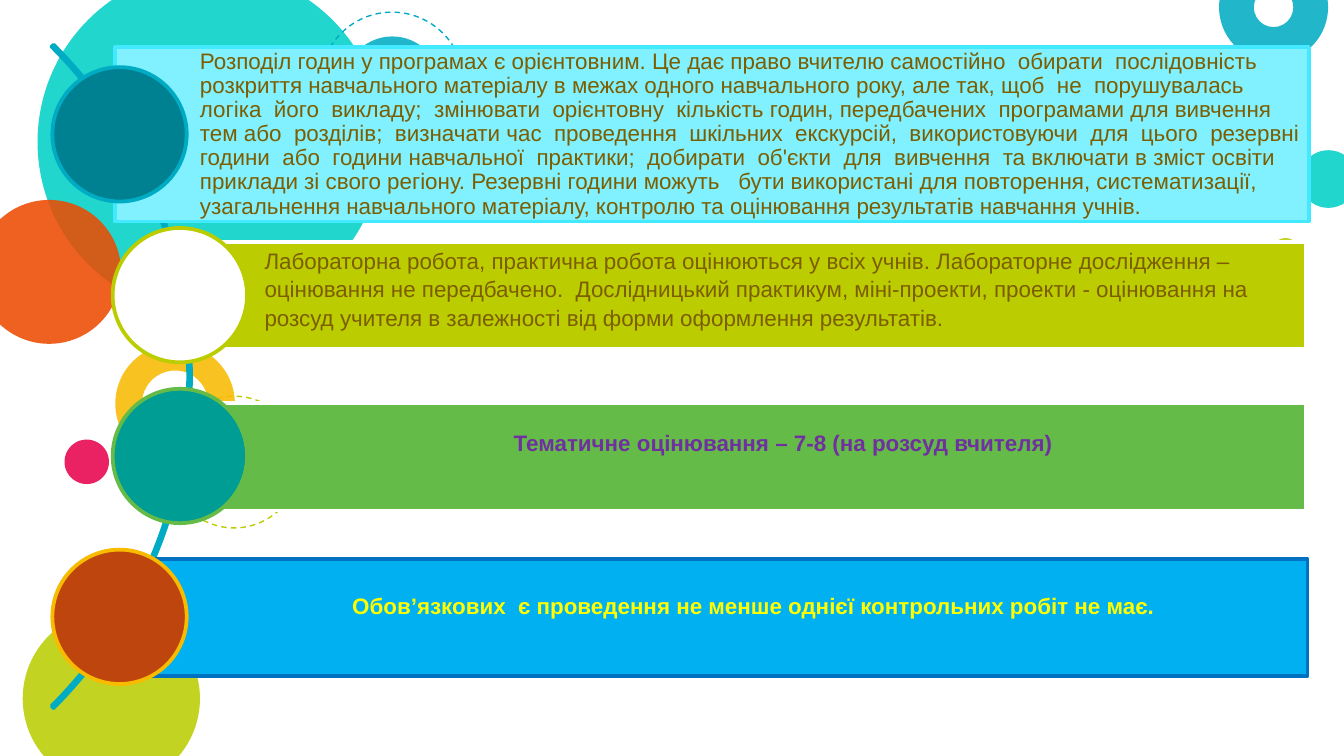
from lxml import etree
from pptx import Presentation
from pptx.dml.color import RGBColor
from pptx.enum.dml import MSO_LINE
from pptx.enum.shapes import MSO_SHAPE as Preset
from pptx.enum.text import MSO_ANCHOR as Anchor, PP_ALIGN as Align
from pptx.oxml.ns import qn
from pptx.util import Cm, Pt

TEAL, CYAN, LIME = "00D1C6", "00ACC3", "BBCD00"
ORANGE, AMBER, PINK = "ED4A00", "F8BB00", "E8004C"
BROWN, WHITE = "7C5E00", "FFFFFF"

# Background rounds: left, top, diameter, colour, ring thickness (None = disc)
ROUNDS = [
    (0.71, -0.58, 6.53, TEAL, 0.298),
    (-0.43, 3.78, 2.72, ORANGE, None),
    (6.5, 0.69, 1.83, CYAN, None),
    (2.18, 6.5, 2.26, AMBER, 0.223),
    (0.43, 11.53, 3.35, LIME, None),
    (1.22, 8.31, 0.84, PINK, None),
    (24.56, 2.84, 1.09, TEAL, None),
    (23.04, -0.89, 2.06, CYAN, 0.319),
    (24.03, 4.5, 0.53, LIME, None),
]

SCHEDULE = (
    "Розподіл годин у програмах є орієнтовним. Це дає право вчителю самостійно  обирати  "
    "послідовність розкриття навчального матеріалу в межах одного навчального року, але так, "
    "щоб  не  порушувалась  логіка  його  викладу;  змінювати  орієнтовну  кількість годин, "
    "передбачених  програмами для вивчення  тем або  розділів;  визначати час  проведення  "
    "шкільних  екскурсій,  використовуючи  для  цього  резервні години  або  години навчальної  "
    "практики;  добирати  об'єкти  для  вивчення  та включати в зміст освіти приклади зі свого "
    "регіону. Резервні години можуть   бути використані для повторення, систематизації, "
    "узагальнення навчального матеріалу, контролю та оцінювання результатів навчання учнів."
)
LAB_WORK = (
    "Лабораторна робота, практична робота оцінюються у всіх учнів. Лабораторне дослідження – "
    "оцінювання не передбачено.  Дослідницький практикум, міні-проекти, проекти - оцінювання "
    "на розсуд учителя в залежності від форми оформлення результатів."
)
THEMATIC = "Тематичне оцінювання – 7-8 (на розсуд вчителя)"
TESTS = "Обов’язкових  є проведення не менше однієї контрольних робіт не має."

MARKER_SIZE, MARKER_TOP, MARKER_STEP = 2.54, 1.27, 3.04


def color(code):
    return RGBColor.from_string(code)


def add_figure(page, preset, left, top, width, height, fill=None, line=None, weight=2):
    shape = page.shapes.add_shape(preset, Cm(left), Cm(top), Cm(width), Cm(height))
    shape.shadow.inherit = False
    if fill:
        shape.fill.solid()
        shape.fill.fore_color.rgb = color(fill)
    else:
        shape.fill.background()
    if line:
        shape.line.color.rgb = color(line)
        shape.line.width = Pt(weight)
    else:
        shape.line.fill.background()
    return shape


def add_round(page, left, top, size, fill, ring):
    preset = Preset.DONUT if ring else Preset.OVAL
    shape = add_figure(page, preset, left, top, size, size, fill)
    if ring:
        shape.adjustments[0] = ring
    # Let 13% of the background through
    tint = shape.fill._xPr.find(qn("a:solidFill"))[0]
    etree.SubElement(tint, qn("a:alpha"), val="87000")


def add_dashed_circle(page, left, top, size, line):
    circle = add_figure(page, Preset.OVAL, left, top, size, size, line=line, weight=0.75)
    circle.line.dash_style = MSO_LINE.DASH


def add_arc(page):
    arc = add_figure(page, Preset.BLOCK_ARC, -14.12, -1.75, 17.73, 17.73, line=CYAN)
    for index, value in enumerate((189, 27, 0.003)):
        arc.adjustments[index] = value


def add_band(page, box, fill, line, text, ink, align=Align.LEFT, bold=False,
             anchor=Anchor.TOP, inset=0.08, spacing=1.0):
    band = add_figure(page, Preset.RECTANGLE, *box, fill, line)
    frame = band.text_frame
    frame.word_wrap = True
    frame.vertical_anchor = anchor
    frame.margin_left, frame.margin_right = Cm(1.6), Cm(0.08)
    frame.margin_top, frame.margin_bottom = Cm(inset), Cm(0.08)
    para = frame.paragraphs[0]
    para.alignment = align
    para.line_spacing = spacing
    span = para.add_run()
    span.text = text
    span.font.name = "Arial"
    span.font.size = Pt(12)
    span.font.bold = bold
    span.font.color.rgb = color(ink)


def add_marker(page, row, left, fill, line):
    top = MARKER_TOP + row * MARKER_STEP
    add_figure(page, Preset.OVAL, left, top, MARKER_SIZE, MARKER_SIZE, fill, line)


def main():
    deck = Presentation()
    deck.slide_width, deck.slide_height = Cm(25.4), Cm(14.29)
    page = deck.slides.add_slide(deck.slide_layouts[6])

    # Background decoration
    add_dashed_circle(page, 3.18, 7.49, 2.49, LIME)
    for item in ROUNDS:
        add_round(page, *item)
    add_dashed_circle(page, 6.05, 0.23, 2.72, CYAN)

    # Curved list: arc, then a band and its marker per row
    add_arc(page)
    add_band(page, (2.18, 0.89, 22.56, 3.3), "81F0FF", "42E9FF", SCHEDULE, BROWN,
             anchor=Anchor.MIDDLE, spacing=0.9)
    add_marker(page, 0, 0.99, "008192", CYAN)
    add_band(page, (3.4, 4.57, 21.29, 2.03), LIME, WHITE, LAB_WORK, BROWN, spacing=1.05)
    add_marker(page, 1, 2.13, WHITE, LIME)
    add_band(page, (3.4, 7.62, 21.29, 2.03), "65BB48", WHITE, THEMATIC, "7030A0",
             Align.CENTER, bold=True, inset=0.5)
    add_marker(page, 2, 2.13, "009D94", "65BB48")
    add_band(page, (2.26, 10.57, 22.45, 2.21), "00B0F0", "0070C0", TESTS, "FFFF00",
             Align.CENTER, bold=True, inset=0.63)
    add_marker(page, 3, 0.99, "BF450E", AMBER)

    deck.save("out.pptx")


if __name__ == "__main__":
    main()
